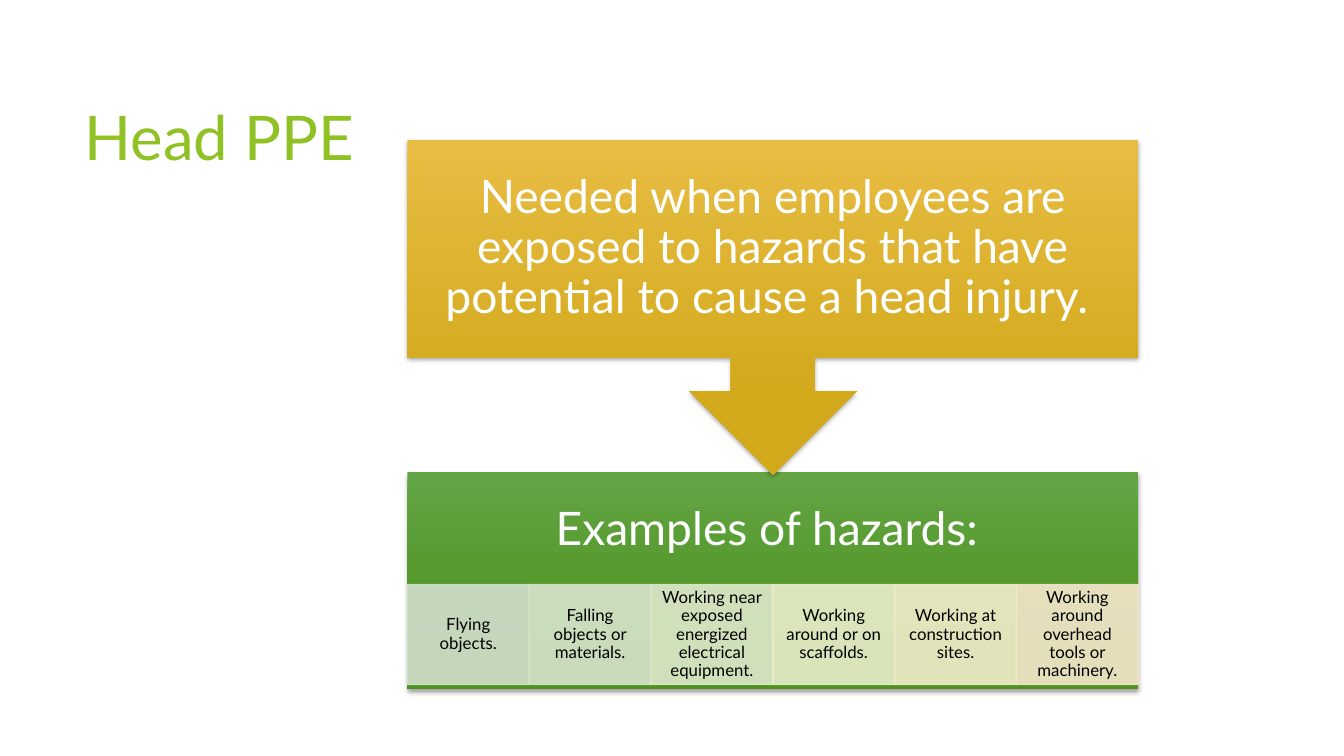
from lxml import etree
from pptx import Presentation
from pptx.dml.color import RGBColor
from pptx.enum import shapes, text
from pptx.oxml import parse_xml
from pptx.oxml.ns import nsdecls, qn
from pptx.util import Inches, Pt

COLORS = {
    "title": "90C226", "white": "FFFFFF", "black": "000000",
    "green_top": "63A545", "green_bottom": "4D921E",
    "gold_top": "E7BC43", "gold_bottom": "D2A91B",
}
HAZARDS = [
    ("Flying objects.", "D1DFCD"),
    ("Falling objects or materials.", "D7E4CC"),
    ("Working near exposed energized electrical equipment.", "DFE9CC"),
    ("Working around or on scaffolds.", "EAEECC"),
    ("Working at construction sites.", "F2EDCC"),
    ("Working around overhead tools or machinery.", "F5E7CD"),
]
LEFT, WIDTH = 4.04, 7.25


def write(sp, words, size, color, align, insets):
    tf = sp.text_frame
    tf.word_wrap = True
    tf.vertical_anchor = text.MSO_ANCHOR.MIDDLE
    tf.margin_left, tf.margin_top, tf.margin_right, tf.margin_bottom = map(Inches, insets)
    p = tf.paragraphs[0]
    p.text = words
    p.alignment = align
    p.line_spacing = 0.9
    p.font.name = "Lato"
    p.font.size = Pt(size)
    p.font.color.rgb = RGBColor.from_string(color)


prs = Presentation()
prs.slide_width, prs.slide_height = Inches(13.33), Inches(7.5)
s = prs.slides.add_slide(prs.slide_layouts[6])

title = s.shapes.add_textbox(Inches(0.74), Inches(0.67), Inches(9.4), Inches(1.44))
write(title, "Head PPE", 44, COLORS["title"], text.PP_ALIGN.LEFT, (0.1, 0.05, 0.1, 0.05))

panels = [
    (shapes.MSO_SHAPE.RECTANGLE, 4.68, 2.16, "green", "Examples of hazards: ", 1.26),
    (shapes.MSO_SHAPE.DOWN_ARROW_CALLOUT, 1.39, 3.32, "gold",
     "Needed when employees are exposed to hazards that have potential to cause a head injury. ", 0.26),
]
cell_width = WIDTH / len(HAZARDS)

for kind, top, height, tone, words, bottom_inset in panels:
    sp = s.shapes.add_shape(kind, Inches(LEFT), Inches(top), Inches(WIDTH), Inches(height))
    sp.line.fill.background()
    sp.fill.gradient()
    sp.fill.gradient_angle = 270
    for stop, position, end in zip(sp.fill.gradient_stops, (0, 0.78), ("top", "bottom")):
        stop.position = position
        stop.color.rgb = RGBColor.from_string(COLORS[f"{tone}_{end}"])
    sp.shadow.inherit = False
    effects = sp._element.spPr.find(qn("a:effectLst"))
    effects.append(parse_xml(
        f'<a:outerShdw {nsdecls("a")} blurRad="{Pt(3)}" dist="{Pt(2)}" dir="5400000" rotWithShape="0">'
        f'<a:srgbClr val="{COLORS["black"]}"><a:alpha val="35000"/></a:srgbClr></a:outerShdw>'))
    write(sp, words, 33, COLORS["white"], text.PP_ALIGN.CENTER, (0.26, 0.26, 0.26, bottom_inset))

    if tone == "green":
        for i, (hazard, tint) in enumerate(HAZARDS):
            cell = s.shapes.add_shape(shapes.MSO_SHAPE.RECTANGLE, Inches(LEFT + i * cell_width),
                                      Inches(5.8), Inches(cell_width), Inches(0.99))
            cell.shadow.inherit = False
            cell.fill.solid()
            cell.fill.fore_color.rgb = RGBColor.from_string(tint)
            cell.line.color.rgb = RGBColor.from_string(tint)
            cell.line.width = Pt(1)
            for color in cell._element.spPr.iter(qn("a:srgbClr")):
                etree.SubElement(color, qn("a:alpha")).set("val", "90000")
            write(cell, hazard, 12, COLORS["black"], text.PP_ALIGN.CENTER, (0.09, 0.02, 0.09, 0.02))

prs.save("out.pptx")
